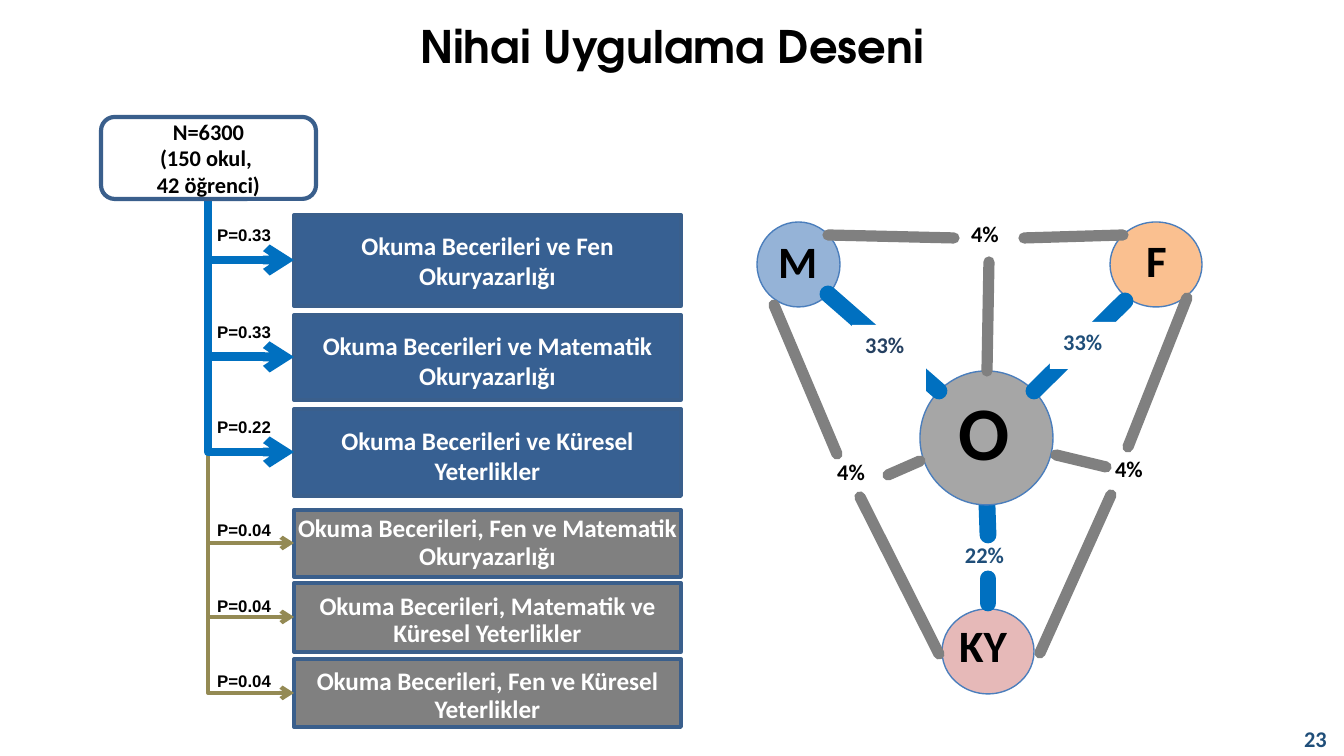
import pptx
import pptx.util
import pptx.dml.color
import pptx.enum.shapes
import pptx.enum.text
import pptx.oxml

PX = 9144000 // 1344 + 4 / 7  # EMU per px, slide is 1344 px wide
RGB = pptx.dml.color.RGBColor
WHITE, BLACK = RGB(255, 255, 255), RGB(0, 0, 0)
NAVY, EDGE, INK = RGB(0x37, 0x60, 0x92), RGB(0x3A, 0x5F, 0x8C), RGB(0x1F, 0x4E, 0x79)
DARK = RGB(0x25, 0x40, 0x61)
BLUE, GRAY, OLIVE = RGB(0, 0x70, 0xC0), RGB(0x80, 0x80, 0x80), RGB(0x94, 0x8A, 0x54)
SILVER, SKY = RGB(0xA6, 0xA6, 0xA6), RGB(0x95, 0xB3, 0xD7)
PEACH, PINK, RIM = RGB(0xFA, 0xC0, 0x90), RGB(0xE6, 0xB9, 0xB8), RGB(0x4B, 0x7E, 0xBC)
SHAPE = pptx.enum.shapes.MSO_SHAPE
CONN = pptx.enum.shapes.MSO_CONNECTOR
ALIGN, ANCHOR = pptx.enum.text.PP_ALIGN, pptx.enum.text.MSO_ANCHOR

prs = pptx.Presentation()
prs.slide_width, prs.slide_height = round(1344 * PX), round(756 * PX)
s = prs.slides.add_slide(prs.slide_layouts[6])


def add_box(box, text, size=12, color=BLACK, font="Calibri", align=ALIGN.LEFT,
            anchor=ANCHOR.TOP, shape=None, fill=None, edge=None, width=0):
    """Bold text in a text box, or in a preset shape when one is given."""
    pos = [round(v * PX) for v in box]
    sp = s.shapes.add_shape(shape, *pos) if shape else s.shapes.add_textbox(*pos)
    if shape:
        sp.shadow.inherit = False
    if fill is not None:
        sp.fill.solid()
        sp.fill.fore_color.rgb = fill
    if edge is not None:
        sp.line.color.rgb = edge
        sp.line.width = pptx.util.Pt(width)
    tf = sp.text_frame
    tf.text = text
    tf.word_wrap = True
    tf.vertical_anchor = anchor
    for p in tf.paragraphs:
        p.alignment = align
        p.font.size = pptx.util.Pt(size)
        p.font.name = font
        p.font.bold = True
        p.font.color.rgb = color
    return sp


def add_line(kind, ends, color, width):
    c = s.shapes.add_connector(kind, *[round(v * PX) for v in ends])
    c.line.color.rgb = color
    c.line.width = pptx.util.Pt(width)
    spPr = c._element.spPr
    spPr.append(pptx.oxml.parse_xml(
        '<a:effectLst xmlns:a="http://schemas.openxmlformats.org/drawingml/2006/main"/>'))
    return c


# Title and slide number
add_box((383, 12, 578, 67), "Nihai Uygulama Deseni", 24, font="TeX Gyre Adventor",
        align=ALIGN.CENTER)
add_box((1038, 719, 302, 40), "23", color=INK, align=ALIGN.RIGHT, anchor=ANCHOR.MIDDLE)

# Test combinations: top, height, label top, probability, text, insets, main design
rows = [
    (215, 91, 218, "0.33", "Okuma Becerileri ve Fen Okuryazarlığı", False, True),
    (315, 85, 315, "0.33", "Okuma Becerileri ve Matematik Okuryazarlığı", True, True),
    (409, 87, 410, "0.22", "Okuma Becerileri ve Küresel Yeterlikler", True, True),
    (510, 67, 513, "0.04", "Okuma Becerileri, Fen ve Matematik Okuryazarlığı", False, False),
    (583, 69, 589, "0.04", "Okuma Becerileri, Matematik ve Küresel Yeterlikler", True, False),
    (659, 68, 664, "0.04", "Okuma Becerileri, Fen ve Küresel Yeterlikler", True, False),
]
trunk_x, trunk_y, box_x = 208, 199, 294
for top, height, label_y, prob, text, inset, main in reversed(rows):
    sp = add_box((box_x, top, 387, height), text, 13.5, WHITE, align=ALIGN.CENTER,
                 anchor=ANCHOR.MIDDLE, shape=SHAPE.RECTANGLE,
                 fill=NAVY if main else GRAY, edge=EDGE, width=2)
    tf = sp.text_frame
    tf.margin_left = tf.margin_right = pptx.util.Inches(0.1 if inset else 0)
    tf.margin_top = pptx.util.Inches(0.05 if inset else 0)
    tf.margin_bottom = 0
    if not main:
        tf.paragraphs[0].line_spacing = 0.9

    # Elbow arrow: down the trunk, then right (a turned and flipped bentConnector2)
    run, drop = box_x - trunk_x, top + height // 2 - trunk_y
    mid_x, mid_y = trunk_x + run / 2, trunk_y + drop / 2
    c = add_line(CONN.ELBOW, (mid_x - drop / 2, mid_y - run / 2,
                              mid_x + drop / 2, mid_y + run / 2),
                 BLUE if main else OLIVE, 4.75 if main else 2.25)
    spPr = c._element.spPr
    spPr.xfrm.set("rot", "16200000")
    spPr.xfrm.set("flipH", "1")
    spPr.prstGeom.set("prst", "bentConnector2")
    spPr.ln.append(pptx.oxml.parse_xml(
        '<a:tailEnd xmlns:a="http://schemas.openxmlformats.org/drawingml/2006/main"'
        ' type="arrow"/>'))
    add_box((204, label_y, 103, 34), "P=" + prob, 9, font="Arial")

# Sample
add_box((101, 117, 215, 82), "N=6300\n(150 okul, \n42 öğrenci)", align=ALIGN.CENTER,
        anchor=ANCHOR.MIDDLE, shape=SHAPE.ROUNDED_RECTANGLE, fill=WHITE, edge=EDGE, width=2.25)

# Link that starts behind the central circle
c = add_line(CONN.STRAIGHT, (988, 535, 987, 505), BLUE, 9)
c._element.spPr.ln.set("cap", "rnd")

# Domain circles and their letters
domains = [
    ("KY", 24, PINK, (942, 609, 92, 85), (946, 611, 87, 79)),
    ("O", 40.5, SILVER, (920, 371, 133, 134), (945, 378, 91, 124)),
    ("M", 24, SKY, (757, 222, 83, 85), (765, 227, 78, 79)),
    ("F", 24, PEACH, (1110, 222, 92, 85), (1133, 226, 55, 79)),
]
for letter, size, fill, circle, box in domains:
    add_box(circle, "", shape=SHAPE.OVAL, fill=fill, edge=RIM, width=0.75)
    add_box(box, letter, size)

# Links: blue for the main pairs, gray for the triples
links = [
    (BLUE, 9, [(1034, 391, 1125, 301), (939, 391, 828, 294), (988, 603, 988, 579)]),
    (GRAY, 6, [(987, 371, 989, 262), (954, 238, 828, 235), (1123, 235, 1024, 238),
               (837, 454, 774, 305), (939, 654, 860, 497), (920, 461, 888, 475),
               (1128, 447, 1187, 298), (1040, 653, 1111, 495), (1106, 467, 1056, 455)]),
]
for color, width, ends in links:
    for end in ends:
        c = add_line(CONN.STRAIGHT, end, color, width)
        c._element.spPr.ln.set("cap", "rnd")

# Percentages; the white ones interrupt the links under them
add_box((852, 325, 74, 79), "33%", color=DARK, fill=WHITE)
add_box((1050, 322, 78, 47), "33%", color=INK, fill=WHITE)
add_box((944, 535, 81, 79), "22%", color=INK, align=ALIGN.CENTER)
for x, y in [(958, 214), (1102, 449), (824, 452)]:
    add_box((x, y, 64, 47), "4%")

prs.save("out.pptx")
